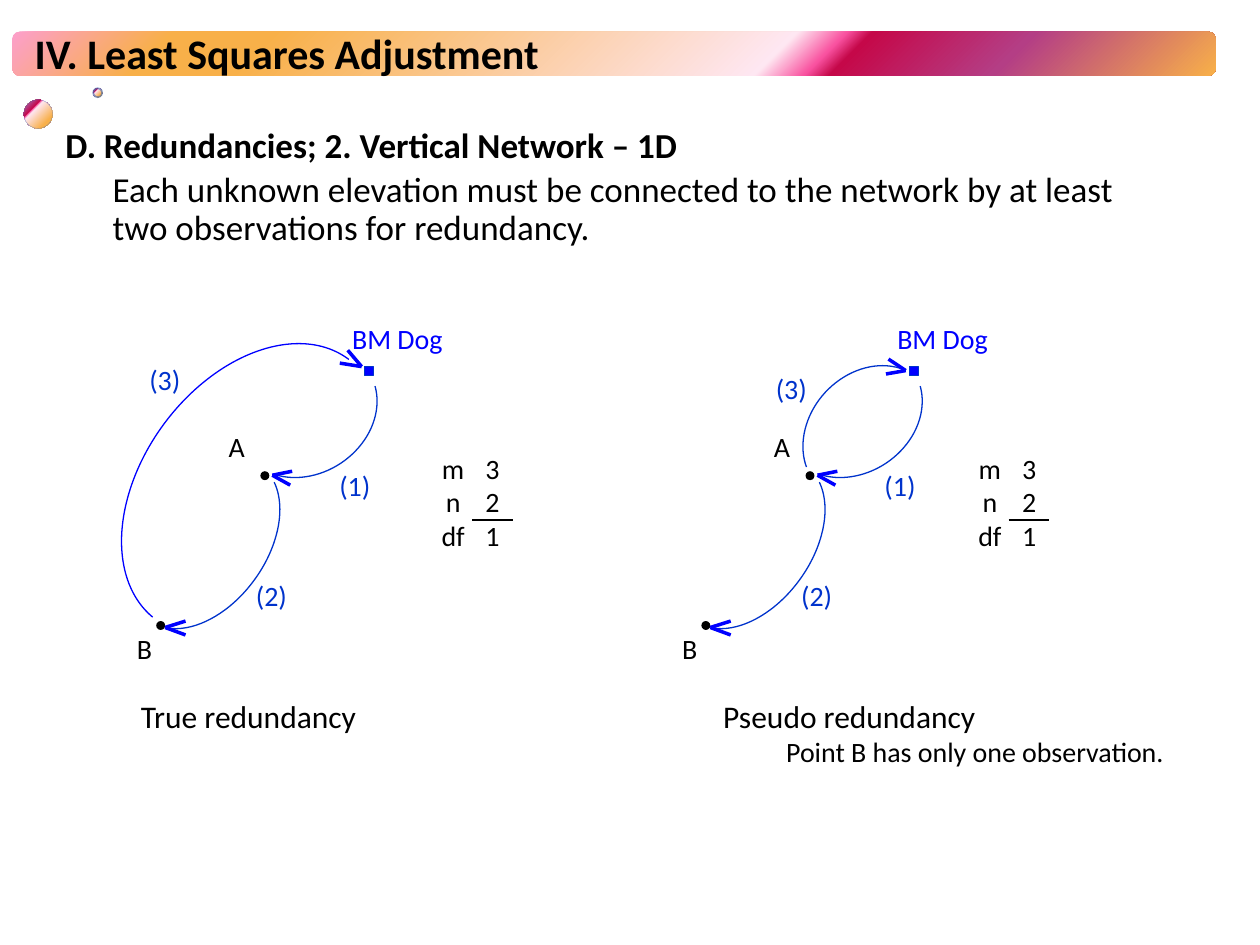
import pptx
import pptx.dml.color
import pptx.enum.shapes
import pptx.enum.text
import pptx.oxml
import pptx.oxml.ns
import pptx.util
from lxml import etree

Cm, Pt = pptx.util.Cm, pptx.util.Pt
SHAPE = pptx.enum.shapes.MSO_SHAPE
FONT = "Calibri"
COLORS = {"text": "000000", "blue": "0000FF", "route": "0033CC",
          "ball": "3B6BC1", "small ball": "3C65AD"}
SUNSET = [(0, "FC9FCB"), (13, "F8B049"), (21, "F8B049"), (63, "FEE7F2"),
          (67, "F952A0"), (69, "C50849"), (82, "B43E85"), (100, "F8B049")]
LINEAR = '<a:lin ang="2700000" scaled="1"/>'
RADIAL = '<a:path path="circle"><a:fillToRect l="100000" t="100000"/></a:path>'


def rgb(name):
    return pptx.dml.color.RGBColor.from_string(COLORS[name])


def xml(tag_text):
    """Parse one DrawingML element; its tag comes first in tag_text."""
    declared = f"xmlns:a=\"{pptx.oxml.ns.nsuri('a')}\""
    tag, rest = tag_text.split(" ", 1)
    return pptx.oxml.parse_xml(f"{tag} {declared} {rest}")


def add_shape(parent, kind, x, y, w, h, fill=None, line=None, width=0):
    shape = parent.add_shape(kind, Cm(x), Cm(y), Cm(w), Cm(h))
    shape.shadow.inherit = False
    if fill:
        shape.fill.solid()
        shape.fill.fore_color.rgb = rgb(fill)
    else:
        shape.fill.background()
    if line:
        shape.line.color.rgb = rgb(line)
        shape.line.width = Pt(width)
    else:
        shape.line.fill.background()
    return shape


def paint_sunset(shape, direction):
    stops = "".join(f'<a:gs pos="{pos * 1000}"><a:srgbClr val="{color}"/></a:gs>'
                    for pos, color in SUNSET)
    gradient = xml(f'<a:gradFill rotWithShape="1"><a:gsLst>{stops}</a:gsLst>'
                   f"{direction}</a:gradFill>")
    plain = shape._element.spPr.find(pptx.oxml.ns.qn("a:noFill"))
    shape._element.spPr.replace(plain, gradient)


def style(paragraph, size, color="text", bold=False):
    for run in paragraph.runs:
        run.font.name, run.font.size, run.font.bold = FONT, Pt(size), bold
        run.font.color.rgb = rgb(color)


def add_text(parent, x, y, w, h, lines, color="text", wrap=False, grow=True):
    """Place a text box; each line is (wording, size, bold, indent in cm)."""
    box = parent.add_textbox(Cm(x), Cm(y), Cm(w), Cm(h))
    frame = box.text_frame
    frame.word_wrap = wrap
    frame.text = "\n".join(line[0] for line in lines)
    if grow:
        frame.auto_size = pptx.enum.text.MSO_AUTO_SIZE.SHAPE_TO_FIT_TEXT
    for paragraph, (_, size, bold, indent) in zip(frame.paragraphs, lines):
        style(paragraph, size, color, bold)
        if indent:
            paragraph.level = 1
            paragraph._p.get_or_add_pPr().set("marL", str(Cm(indent)))
    return frame


def add_header(slide, x, y):
    bar = add_shape(slide.shapes, SHAPE.ROUNDED_RECTANGLE, x, y, 24.26, 0.89)
    paint_sunset(bar, LINEAR)
    add_text(slide.shapes, x + 0.2, y - 0.2, 18.52, 1.27,
             [("IV. Least Squares Adjustment", 24, True, 0)], wrap=True)
    for dx, dy, size, color, width in ((0.23, 1.37, 0.58, "ball", 0.16),
                                       (1.63, 1.14, 0.18, "small ball", 1)):
        ball = add_shape(slide.shapes, SHAPE.OVAL, x + dx, y + dy, size, size,
                         line=color, width=width)
        paint_sunset(ball, RADIAL)
        outline = ball.line.fill.fore_color._xFill.find(pptx.oxml.ns.qn("a:srgbClr"))
        outline.append(xml('<a:alpha val="60000"/>'))


def add_body(slide, x, y, w, h):
    frame = add_text(slide.shapes, x, y, w, h, [
        ("D. Redundancies; 2. Vertical Network – 1D", 20, True, 0),
        ("Each unknown elevation must be connected to the network by at least "
         "two observations for redundancy.", 20, False, 0.95)],
        wrap=True, grow=False)
    for paragraph, before in zip(frame.paragraphs, (7.5, 3.8)):
        paragraph.line_spacing = 0.9
        paragraph.space_before = Pt(before)


# Routes: label position, arc box, rotation, arc ends, arc color,
# arrow tip and the ends of its two barbs
ROUTE_1 = ("(1)", (4.08, 2.97), (2.45, 0.48, 2.46, 2.97), 56.4, (169.47, 35.7),
           "route", (2.98, 3.23), ((3.38, 3.15), (3.34, 3.43)))
ROUTE_2 = ("(2)", (2.4, 5.18), (0.4, 2.69, 2.46, 3.84), 35.8, (169.47, 45.93),
           "route", (0.82, 6.3), ((1.23, 6.17), (1.23, 6.45)))
ROUTE_3_FROM_B = ("(3)", (0.25, 0.84), (0.36, 0.25, 4.42, 6.53), 36.4,
                  (54.88, 162.19), "blue", (4.78, 1.04),
                  ((4.34, 0.97), (4.5, 0.71)))
ROUTE_3_FROM_A = ("(3)", (1.89, 1.02), (2.81, 0.91, 2.46, 2.97), 42.9,
                  (65.68, 152), "route", (4.76, 1.12),
                  ((4.36, 1.19), (4.41, 0.89)))
# Points: name, color, marker, marker position, label position, label width
POINTS = [("A", "text", SHAPE.OVAL, (2.74, 3.15), (1.85, 2.18), 0.84),
          ("BM Dog", "blue", SHAPE.RECTANGLE, (4.83, 1.04), (4.34, 0), 2.34),
          ("B", "text", SHAPE.OVAL, (0.64, 6.17), (0, 6.25), 0.81)]


def add_network(slide, x, y, routes):
    network = slide.shapes.add_group_shape().shapes
    for name, color, marker, (mx, my), (lx, ly), width in POINTS:
        outline = "route" if marker == SHAPE.RECTANGLE else None
        add_shape(network, marker, x + mx, y + my, 0.18, 0.18, color, outline, 0.25)
        add_text(network, x + lx, y + ly, width, 0.94, [(name, 16, False, 0)], color)
    for label, (lx, ly), (ax, ay, w, h), turn, ends, color, tip, barbs in routes:
        add_text(network, x + lx, y + ly, 1.14, 0.94, [(label, 16, False, 0)], "route")
        arc = add_shape(network, SHAPE.ARC, x + ax, y + ay, w, h, line=color)
        arc.rotation = turn
        arc.adjustments[0], arc.adjustments[1] = ends
        for bx, by in barbs:
            barb = network.add_connector(
                pptx.enum.shapes.MSO_CONNECTOR.STRAIGHT,
                Cm(x + tip[0]), Cm(y + tip[1]), Cm(x + bx), Cm(y + by))
            barb.line.color.rgb = rgb("blue")
            barb.line.width = Pt(0)
            etree.SubElement(barb._element.spPr, pptx.oxml.ns.qn("a:effectLst"))


def add_freedom_table(slide, x, y):
    rows = [("m", "3"), ("n", "2"), ("df", "1")]
    table = slide.shapes.add_table(3, 2, Cm(x), Cm(y), Cm(1.58), Cm(2.04)).table
    table.first_row = table.horz_banding = False
    for r, row in enumerate(rows):
        for c, value in enumerate(row):
            cell = table.cell(r, c)
            cell.margin_left = cell.margin_right = 0
            cell.margin_top = cell.margin_bottom = 0
            cell.fill.background()
            cell.text_frame.text = value
            paragraph = cell.text_frame.paragraphs[0]
            paragraph.alignment = pptx.enum.text.PP_ALIGN.CENTER
            style(paragraph, 16)
    # Subtraction rule between n and df
    for r, side in ((1, "lnB"), (2, "lnT")):
        rule = xml(f'<a:{side} w="{Pt(1)}"><a:solidFill><a:srgbClr '
                   f'val="{COLORS["text"]}"/></a:solidFill></a:{side}>')
        table.cell(r, 1)._tc.get_or_add_tcPr().insert(0, rule)


def main():
    deck = pptx.Presentation()
    deck.slide_width, deck.slide_height = Cm(25.4), Cm(19.05)
    slide = deck.slides.add_slide(deck.slide_layouts[6])
    add_header(slide, 0.25, 0.64)
    add_body(slide, 1.07, 2.46, 21.89, 14.88)
    # Pseudo redundancy on the right, true redundancy on the left
    add_network(slide, 13.5, 6.35, [ROUTE_1, ROUTE_2, ROUTE_3_FROM_A])
    add_network(slide, 2.51, 6.35, [ROUTE_1, ROUTE_2, ROUTE_3_FROM_B])
    for x in (8.74, 19.56):
        add_freedom_table(slide, x, 9.12)
    # Captions
    add_text(slide.shapes, 2.59, 13.92, 4.9, 1.02, [("True redundancy", 18, False, 0)])
    add_text(slide.shapes, 14.33, 13.92, 9.91, 1.7,
             [("Pseudo redundancy", 18, False, 0),
              ("Point B has only one observation.", 16, False, 1.27)], wrap=True)
    deck.save("out.pptx")


if __name__ == "__main__":
    main()
